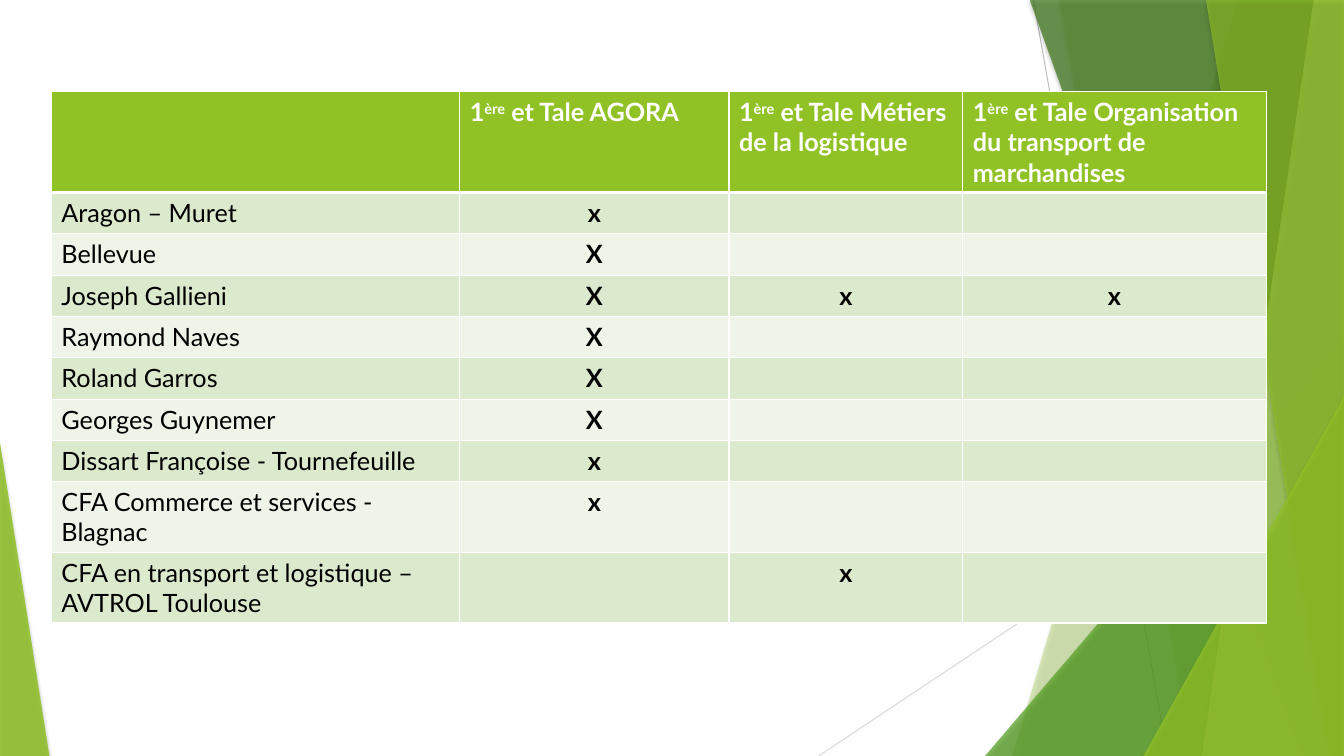
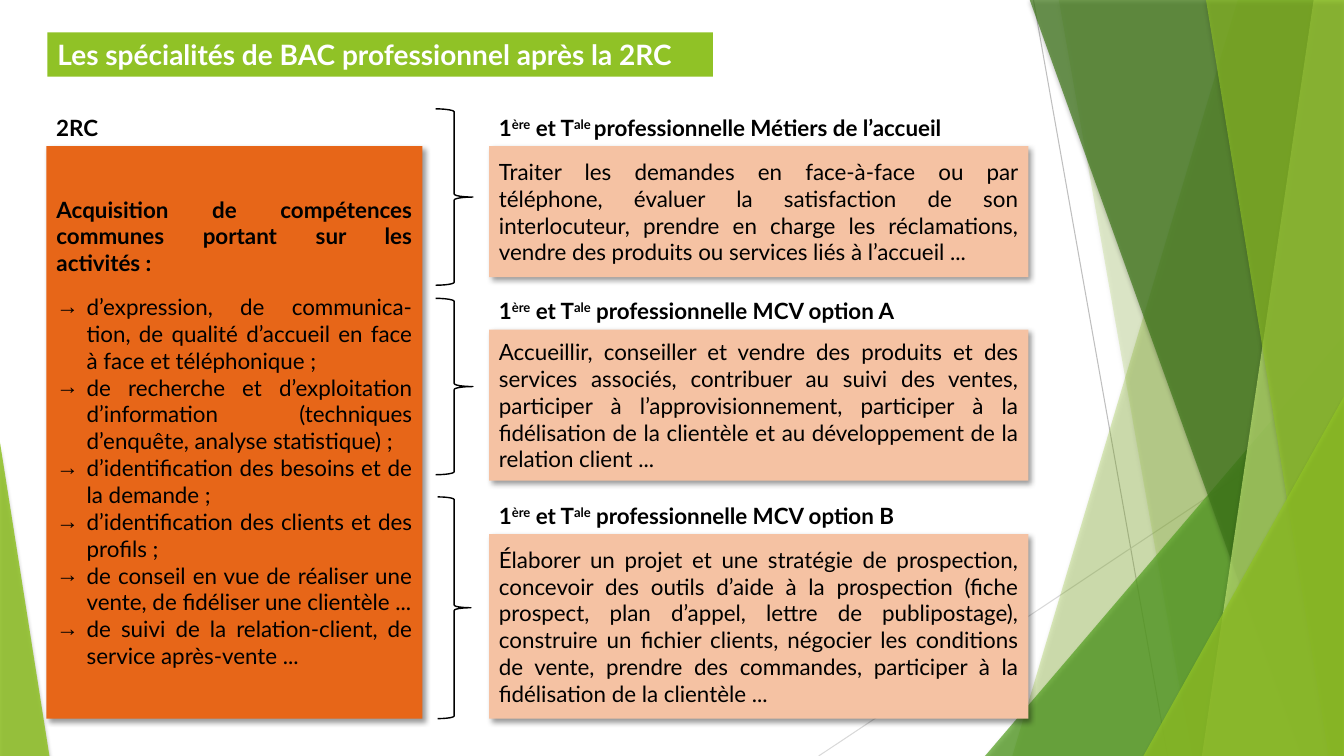
from lxml.etree import SubElement
from pptx import Presentation
from pptx.dml.color import RGBColor
from pptx.enum.shapes import MSO_CONNECTOR, MSO_SHAPE
from pptx.enum.text import MSO_ANCHOR, MSO_AUTO_SIZE, PP_ALIGN
from pptx.oxml.ns import qn
from pptx.util import Inches, Pt

COLORS = {
    "lime": "90C226", "green": "54A021", "forest": "3F7819", "pale": "C0E474",
    "orange": "E76618", "peach": "F5C2A3", "row_dark": "DBE9CD", "row_light": "EEF4E8",
    "white": "FFFFFF", "black": "000000", "gray": "BFBFBF", "silver": "D9D9D9",
}


def style_shape(shape, color, opacity=100, shadow=None):
    shape.fill.solid()
    shape.fill.fore_color.rgb = RGBColor.from_string(COLORS[color])
    if opacity < 100:
        tint = shape.element.spPr.find(qn("a:solidFill")).find(qn("a:srgbClr"))
        SubElement(tint, qn("a:alpha"), val=str(opacity * 1000))
    shape.line.fill.background()
    shape.shadow.inherit = False
    if shadow:
        strength, blur, distance, angle = shadow
        effects = shape.element.spPr.find(qn("a:effectLst"))
        outer = SubElement(effects, qn("a:outerShdw"), blurRad=str(Pt(blur)),
                           dist=str(Pt(distance)), dir=str(angle * 60000), rotWithShape="0")
        shade = SubElement(outer, qn("a:srgbClr"), val=COLORS["black"])
        SubElement(shade, qn("a:alpha"), val=str(strength * 1000))


def write(para, text, size, color="black", bold=False, align=PP_ALIGN.JUSTIFY):
    para.alignment = align
    para.font.name = "Lato"
    para.font.size = Pt(size)
    para.font.bold = bold
    para.font.color.rgb = RGBColor.from_string(COLORS[color])
    for index, part in enumerate(text.split("|")):
        span = para.add_run()
        span.text = part
        if index % 2:
            span.font._element.set("baseline", "30000")


deck = Presentation()
deck.slide_width, deck.slide_height = Inches(13.33), Inches(7.5)
table_page = deck.slides.add_slide(deck.slide_layouts[6])

for color, ends in [("gray", (10.25, 0, 11.58, 7.5)), ("silver", (13.33, 4.03, 8.12, 7.5))]:
    line = table_page.shapes.add_connector(MSO_CONNECTOR.STRAIGHT, *map(Inches, ends))
    line.line.color.rgb = RGBColor.from_string(COLORS[color])
    line.line.width = Pt(0.75)
    SubElement(line.element.spPr, qn("a:effectLst"))

facets = [
    ("lime", 30, (12.28, 10.04), None),
    ("lime", 20, (10.5, 11.82), None),
    ("green", 72, (9.77, 3.33, 3.56, 4.17), 1),
    ("forest", 70, (10.21, 12.91), None),
    ("pale", 70, (13.03, 11.92), None),
    ("lime", 65, (11.96, 13.18), None),
    ("lime", 80, (11.34, 3.93, 1.99, 3.57), 1),
    ("lime", 85, (0, 4.39, 0.49, 3.11), 0),
]
for color, opacity, place, apex in facets:
    if apex is None:
        top_left, bottom_left = place
        builder = table_page.shapes.build_freeform(Inches(top_left), Inches(-0.01))
        corners = [(13.33, -0.01), (13.33, 7.5), (bottom_left, 7.5)]
        builder.add_line_segments([(Inches(x), Inches(y)) for x, y in corners])
        facet = builder.convert_to_shape()
    else:
        facet = table_page.shapes.add_shape(MSO_SHAPE.ISOSCELES_TRIANGLE, *map(Inches, place))
        facet.adjustments[0] = apex
    style_shape(facet, color, opacity, (35, 3, 2, 90))

for number, shape in enumerate(list(table_page.shapes), 20):
    shape.element.xpath(".//p:cNvPr")[0].set("id", str(number))
    deck.slide_master.shapes.element.append(shape.element)

rows = [
    ("", "1|ère| et Tale AGORA", "1|ère| et Tale Métiers de la logistique",
     "1|ère| et Tale Organisation du transport de marchandises"),
    ("Aragon – Muret", "x", "", ""),
    ("Bellevue", "X", "", ""),
    ("Joseph Gallieni", "X", "x", "x"),
    ("Raymond Naves", "X", "", ""),
    ("Roland Garros", "X", "", ""),
    ("Georges Guynemer", "X", "", ""),
    ("Dissart Françoise - Tournefeuille", "x", "", ""),
    ("CFA Commerce et services - Blagnac", "x", "", ""),
    ("CFA en transport et logistique – AVTROL Toulouse", "", "x", ""),
]
widths = [4.05, 2.67, 2.32, 3.01]
heights = [1] + [0.41] * 7 + [0.7] * 2
table = table_page.shapes.add_table(
    len(rows), len(widths), Inches(0.51), Inches(0.91),
    Inches(sum(widths)), Inches(sum(heights))).table
for column, width in zip(table.columns, widths):
    column.width = Inches(width)
for row_index, texts in enumerate(rows):
    table.rows[row_index].height = Inches(heights[row_index])
    header = row_index == 0
    fill = "lime" if header else ("row_light", "row_dark")[row_index % 2]
    for column_index, text in enumerate(texts):
        cell = table.cell(row_index, column_index)
        properties = cell._tc.get_or_add_tcPr()
        for side in ("lnL", "lnR", "lnT", "lnB"):
            thick = (row_index, side) in ((0, "lnB"), (1, "lnT"))
            border = SubElement(properties, qn("a:" + side), w=str(Pt(3 if thick else 1)))
            paint = SubElement(border, qn("a:solidFill"))
            SubElement(paint, qn("a:srgbClr"), val=COLORS["white"])
        cell.fill.solid()
        cell.fill.fore_color.rgb = RGBColor.from_string(COLORS[fill])
        if text:
            centered = not header and column_index > 0
            write(cell.text_frame.paragraphs[0], text, 18, "white" if header else "black",
                  header or centered, PP_ALIGN.CENTER if centered else PP_ALIGN.LEFT)

page = deck.slides.add_slide(deck.slide_layouts[1])
title, skills = page.placeholders[0], page.placeholders[1]
title.left, title.top, title.width, title.height = map(Inches, (0.47, 0.32, 6.6, 0.44))
style_shape(title, "lime")
title.text_frame.auto_size = MSO_AUTO_SIZE.NONE
title.text_frame.vertical_anchor = MSO_ANCHOR.MIDDLE
write(title.text_frame.paragraphs[0], "Les spécialités de BAC professionnel après la 2RC",
      20, "white", True, PP_ALIGN.LEFT)

skills.left, skills.top, skills.width, skills.height = map(Inches, (0.46, 1.45, 3.73, 5.68))
style_shape(skills, "orange", shadow=(40, 4, 3, 45))
frame = skills.text_frame
frame.auto_size = MSO_AUTO_SIZE.NONE
frame.vertical_anchor = MSO_ANCHOR.MIDDLE
frame.margin_top = frame.margin_bottom = Inches(0.1)
activities = [
    "Acquisition de compétences communes portant sur les activités :",
    "d’expression, de communica-tion, de qualité d’accueil en face à face et téléphonique ;",
    "de recherche et d’exploitation d’information (techniques d’enquête, analyse statistique) ;",
    "d’identification des besoins et de la demande ;",
    "d’identification des clients et des profils ;",
    "de conseil en vue de réaliser une vente, de fidéliser une clientèle ...",
    "de suivi de la relation-client, de service après-vente ...",
]
for index, text in enumerate(activities):
    para = frame.add_paragraph() if index else frame.paragraphs[0]
    indent = Inches(0.3) if index else 0
    properties = para._p.get_or_add_pPr()
    properties.set("marL", str(indent))
    properties.set("indent", str(-indent))
    if index:
        bullet_color = SubElement(properties, qn("a:buClr"))
        SubElement(bullet_color, qn("a:srgbClr"), val=COLORS["black"])
        SubElement(properties, qn("a:buChar"), char="→")
    else:
        SubElement(properties, qn("a:buNone"))
    para.space_before = Pt(0)
    para.space_after = Pt(0 if index else 12)
    write(para, text, 16, bold=index == 0)

tracks = [
    ("1|ère| et T|ale |professionnelle Métiers de l’accueil", 1.08, 1.3, (4.32, 1.08, 0.37, 1.75),
     "Traiter les demandes en face-à-face ou par téléphone, évaluer la satisfaction de son "
     "interlocuteur, prendre en charge les réclamations, vendre des produits ou services liés "
     "à l’accueil ..."),
    ("1|ère| et T|ale| professionnelle MCV option A", 2.9, 1.5, (4.32, 2.96, 0.37, 1.75),
     "Accueillir, conseiller et vendre des produits et des services associés, contribuer au "
     "suivi des ventes, participer à l’approvisionnement, participer à la fidélisation de la "
     "clientèle et au développement de la relation client ..."),
    ("1|ère| et T|ale| professionnelle MCV option B", 4.93, 1.83, (4.34, 4.93, 0.33, 2.2),
     "Élaborer un projet et une stratégie de prospection, concevoir des outils d’aide à la "
     "prospection (fiche prospect, plan d’appel, lettre de publipostage), construire un fichier "
     "clients, négocier les conditions de vente, prendre des commandes, participer à la "
     "fidélisation de la clientèle ..."),
]
for heading, top, height, brace_place, text in tracks:
    box = page.shapes.add_shape(MSO_SHAPE.RECTANGLE, Inches(4.85), Inches(top + 0.37),
                                Inches(5.35), Inches(height))
    style_shape(box, "peach", shadow=(40, 4, 3, 45))
    box.text_frame.word_wrap = True
    box.text_frame.vertical_anchor = MSO_ANCHOR.MIDDLE
    write(box.text_frame.paragraphs[0], text, 16)
    brace = page.shapes.add_shape(MSO_SHAPE.RIGHT_BRACE, *map(Inches, brace_place))
    brace.adjustments[0] = 0.08
    brace.fill.background()
    brace.line.color.rgb = RGBColor.from_string(COLORS["black"])
    brace.line.width = Pt(1)
    brace.shadow.inherit = False

headings = [("2RC", 0.46, 1.08, 3.47)] + [(track[0], 4.85, track[1], 5.35) for track in tracks]
for text, left, top, width in headings:
    label = page.shapes.add_textbox(Inches(left), Inches(top), Inches(width), Inches(0.37))
    label.text_frame.word_wrap = True
    write(label.text_frame.paragraphs[0], text, 16, bold=True)

deck.save("out.pptx")
